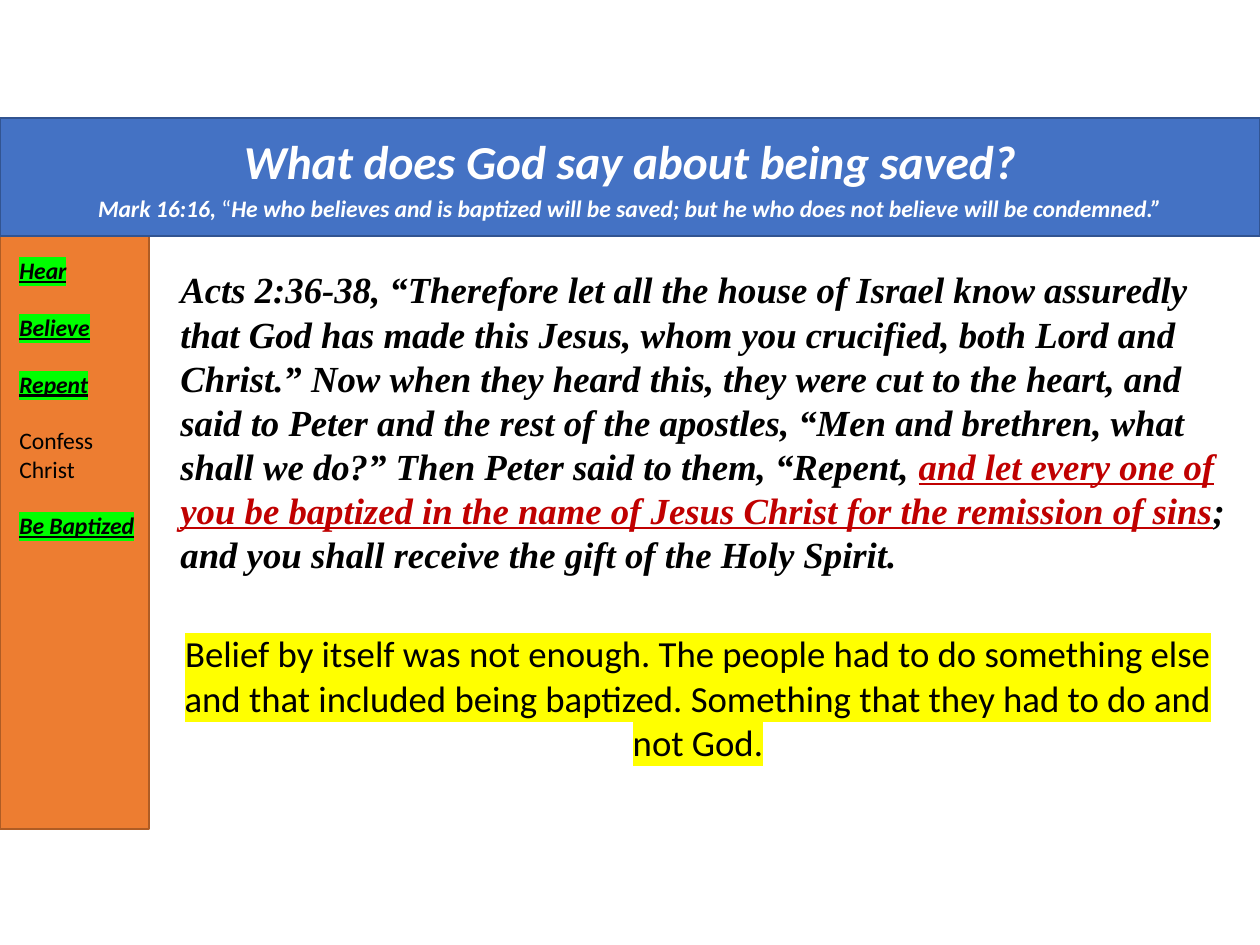
from dataclasses import dataclass

from lxml.etree import SubElement
from pptx import Presentation
from pptx.dml.color import RGBColor
from pptx.enum.shapes import MSO_SHAPE
from pptx.enum.text import MSO_ANCHOR, MSO_AUTO_SIZE, PP_ALIGN
from pptx.oxml.ns import qn
from pptx.util import Emu, Pt

PX = 914400 / 126
COLORS = {
    "bar": "4472C4", "bar_line": "325491",
    "sidebar": "ED7D31", "sidebar_line": "AF5C24",
    "white": "FFFFFF", "black": "000000", "red": "C00000",
    "green": "00FF00", "yellow": "FFFF00",
}


@dataclass(frozen=True)
class Box:
    left: int
    top: int
    width: int
    height: int

    def emu(self) -> list[Emu]:
        return [Emu(round(v * PX)) for v in (self.left, self.top, self.width, self.height)]


@dataclass(frozen=True)
class Span:
    text: str
    size: float
    color: str = "black"
    font: str = "Calibri"
    strong: bool = False  # bold and italic
    underline: bool = False
    highlight: str = ""


def rgb(name: str) -> RGBColor:
    return RGBColor.from_string(COLORS[name])


def add_span(p, span: Span) -> None:
    r = p.add_run()
    r.text = span.text
    font = r.font
    font.name, font.size = span.font, Pt(span.size)
    font.bold = font.italic = span.strong
    font.underline = span.underline
    font.color.rgb = rgb(span.color)
    if span.highlight:
        rPr = r._r.get_or_add_rPr()
        mark = SubElement(rPr, qn("a:highlight"))
        SubElement(mark, qn("a:srgbClr"), val=COLORS[span.highlight])
        rPr.find(qn("a:solidFill")).addnext(mark)  # the schema fixes this order


def write(tf, paragraphs: list[list[Span]], align: PP_ALIGN, gap: float = 0) -> None:
    tf.word_wrap = True
    tf.auto_size = MSO_AUTO_SIZE.NONE
    for i, spans in enumerate(paragraphs):
        p = tf.add_paragraph() if i else tf.paragraphs[0]
        p.alignment = align
        p.space_before = Pt(gap if i else 0)
        for span in spans:
            add_span(p, span)


def paint(sp, fill: str) -> None:
    sp.fill.solid()
    sp.fill.fore_color.rgb = rgb(fill)
    sp.line.color.rgb = rgb(f"{fill}_line")
    sp.line.width = Pt(1)


def add_text(s, box: Box, paragraphs: list[list[Span]],
             align: PP_ALIGN = PP_ALIGN.LEFT, gap: float = 0) -> None:
    write(s.shapes.add_textbox(*box.emu()).text_frame, paragraphs, align, gap)


def add_sidebar(s, box: Box) -> None:
    sp = s.shapes.add_shape(MSO_SHAPE.RECTANGLE, *box.emu())
    sp.shadow.inherit = False
    paint(sp, "sidebar")


def place_title(s, box: Box, paragraphs: list[list[Span]]) -> None:
    sp = s.shapes.title
    sp.left, sp.top, sp.width, sp.height = box.emu()
    paint(sp, "bar")
    sp.text_frame.vertical_anchor = MSO_ANCHOR.MIDDLE
    write(sp.text_frame, paragraphs, PP_ALIGN.CENTER, gap=2.7)
    s.shapes._spTree.append(sp._element)  # the bar lies over the sidebar's edge


STEPS = {"Hear": True, "Believe": True, "Repent": True,
         "Confess Christ": False, "Be Baptized": True}

TITLE = [
    [Span("What does God say about being saved?", 27, "white", strong=True)],
    [
        Span("Mark 16:16, ", 13.5, "white", strong=True),
        Span("“", 13.5, "white"),
        Span("He who believes and is baptized will be saved; but he who does not "
             "believe will be condemned.”", 13.5, "white", strong=True),
    ],
]


def verse(text: str, color: str = "black", underline: bool = False) -> Span:
    return Span(text, 21, color, "Times New Roman", True, underline)


def step(name: str, marked: bool) -> Span:
    return Span(name, 13.5, strong=marked, underline=marked,
                highlight="green" if marked else "")


PASSAGE = [
    verse("Acts 2:36-38, “Therefore let all the house of Israel know assuredly that God "
          "has made this Jesus, whom you crucified, both Lord and Christ.” Now when they "
          "heard this, they were cut to the heart, and said to Peter and the rest of the "
          "apostles, “Men and brethren, what shall we do?” Then Peter said to them, “Repent, "),
    verse("and let every one of you be baptized in the name of Jesus Christ for the "
          "remission of sins", "red", True),
    verse("; and you shall receive the gift of the Holy Spirit."),
]
CONCLUSION = Span(
    "Belief by itself was not enough. The people had to do something else and that "
    "included being baptized. Something that they had to do and not God.",
    21, highlight="yellow")


def main() -> None:
    prs = Presentation()
    prs.slide_width, prs.slide_height = Box(0, 0, 1260, 945).emu()[2:]
    s = prs.slides.add_slide(prs.slide_layouts[5])

    add_sidebar(s, Box(0, 236, 149, 593))
    add_text(s, Box(7, 250, 142, 299), [[step(*item)] for item in STEPS.items()], gap=16.2)
    add_text(s, Box(168, 261, 1092, 324), [PASSAGE])
    add_text(s, Box(168, 625, 1060, 146), [[CONCLUSION]], PP_ALIGN.CENTER)
    place_title(s, Box(0, 118, 1260, 118), TITLE)

    prs.save("out.pptx")


if __name__ == "__main__":
    main()
